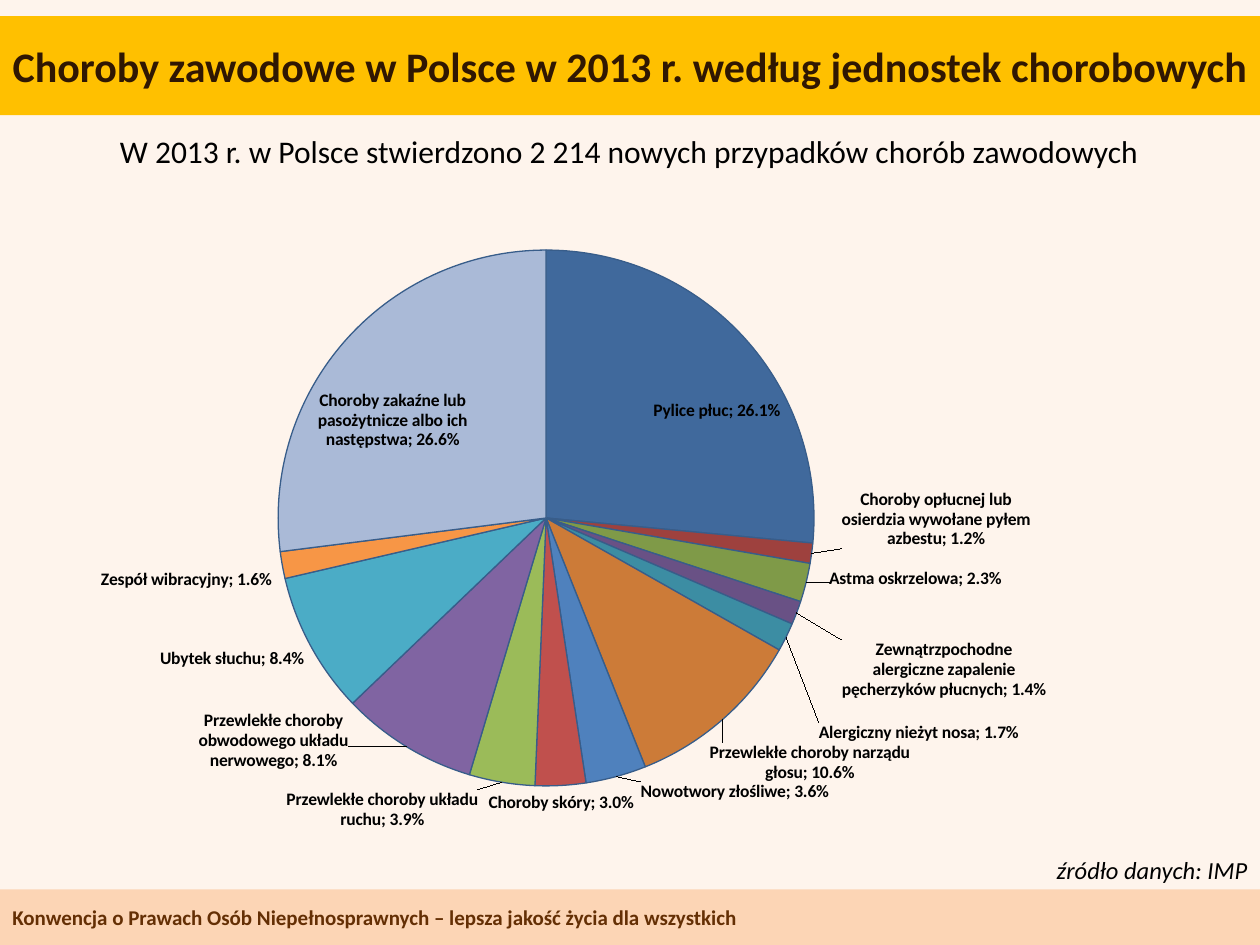
from copy import deepcopy

from pptx import Presentation
from pptx.chart.data import CategoryChartData
from pptx.dml.color import RGBColor
from pptx.enum.chart import XL_CHART_TYPE as ChartType, XL_LABEL_POSITION as LabelPos
from pptx.enum.shapes import MSO_SHAPE as Shape
from pptx.enum.text import MSO_ANCHOR as Anchor, PP_ALIGN as Align
from pptx.oxml import parse_xml
from pptx.oxml.ns import nsdecls, qn
from pptx.util import Pt

FONT = "Calibri"
PAPER = RGBColor(0xFE, 0xF4, 0xEC)
GOLD = RGBColor(0xFF, 0xC0, 0x00)
PEACH = RGBColor(0xFC, 0xD5, 0xB5)
DARK_BROWN = RGBColor(0x30, 0x17, 0x02)
BROWN = RGBColor(0x64, 0x2F, 0x04)
BLACK = RGBColor(0, 0, 0)
OUTLINE = RGBColor(0x38, 0x5D, 0x8A)

# Disease, share, slice colour, label shift in points from its place at the rim
DISEASES = [
    ("Pylice płuc", 0.261, RGBColor(0x40, 0x69, 0x9C), (-55, 50)),
    ("Choroby opłucnej lub osierdzia wywołane pyłem azbestu", 0.012,
     RGBColor(0x9E, 0x41, 0x3E), (13, -37)),
    ("Astma oskrzelowa", 0.023, RGBColor(0x7F, 0x9A, 0x48), (9, -9)),
    ("Zewnątrzpochodne alergiczne zapalenie pęcherzyków płucnych", 0.014,
     RGBColor(0x69, 0x51, 0x85), (22, 14)),
    ("Alergiczny nieżyt nosa", 0.017, RGBColor(0x3C, 0x8D, 0xA3), (15, 47)),
    ("Przewlekłe choroby narządu głosu", 0.106,
     RGBColor(0xCC, 0x7B, 0x38), (-10, 10)),
    ("Nowotwory złośliwe", 0.036, RGBColor(0x4F, 0x81, 0xBD), (13, -1)),
    ("Choroby skóry", 0.03, RGBColor(0xC0, 0x50, 0x4D), None),
    ("Przewlekłe choroby układu ruchu", 0.039,
     RGBColor(0x9B, 0xBB, 0x59), (-13, 0)),
    ("Przewlekłe choroby obwodowego układu nerwowego", 0.081,
     RGBColor(0x80, 0x64, 0xA2), (-31, -24)),
    ("Ubytek słuchu", 0.084, RGBColor(0x4B, 0xAC, 0xC6), None),
    ("Zespół wibracyjny", 0.016, RGBColor(0xF7, 0x96, 0x46), (-2, 2)),
    ("Choroby zakaźne lub pasożytnicze albo ich następstwa", 0.266,
     RGBColor(0xAA, 0xBA, 0xD7), (73, 65)),
]


def add_text(slide, box, text, size, color, align=Align.LEFT, bold=False,
             italic=False, inset=7.2):
    left, top, width, height = map(Pt, box)
    frame = slide.shapes.add_textbox(left, top, width, height).text_frame
    frame.word_wrap = True
    frame.vertical_anchor = Anchor.MIDDLE
    frame.margin_left = frame.margin_right = Pt(inset)
    paragraph = frame.paragraphs[0]
    paragraph.alignment = align
    run = paragraph.add_run()
    run.text = text
    font = run.font
    font.name, font.size, font.bold, font.italic = FONT, Pt(size), bold, italic
    font.color.rgb = color


def add_band(slide, box, fill, text, **text_format):
    """Full-width coloured strip with one line of text."""
    band = slide.shapes.add_shape(Shape.RECTANGLE, *map(Pt, box))
    band.shadow.inherit = False
    band.fill.solid()
    band.fill.fore_color.rgb = fill
    band.line.fill.background()
    add_text(slide, box, text, **text_format)


def layout_xml(**parts):
    values = "".join(f'<c:{name} val="{value}"/>' for name, value in parts.items())
    return (f'<c:layout {nsdecls("c")}><c:manualLayout>{values}'
            '</c:manualLayout></c:layout>')


def shift_label(labels, index, shift, box):
    """Give one slice its own label, moved by shift from the default place."""
    label = parse_xml(f'<c:dLbl {nsdecls("c")}><c:idx val="{index}"/></c:dLbl>')
    x, y = (round(move / side, 4) for move, side in zip(shift, box[2:]))
    label.append(parse_xml(layout_xml(x=x, y=y)))
    for part in labels:
        if part.tag not in (qn("c:dLbl"), qn("c:showLeaderLines")):
            label.append(deepcopy(part))
    return label


def add_disease_pie(slide, box):
    data = CategoryChartData(number_format="0.0%")
    data.categories = [name for name, *_ in DISEASES]
    data.add_series("Series 1", [share for _, share, *_ in DISEASES])
    chart = slide.shapes.add_chart(ChartType.PIE, *map(Pt, box), data).chart
    chart.has_legend = chart.has_title = False
    chart.font.name, chart.font.size = FONT, Pt(10)
    chart.font.color.rgb = BLACK

    # Fixed place of the pie within the chart
    plot_area = chart._chartSpace.chart.plotArea
    for old in plot_area.findall(qn("c:layout")):
        plot_area.remove(old)
    plot_area.insert(0, parse_xml(layout_xml(
        layoutTarget="inner", xMode="edge", yMode="edge",
        x=0.233, y=0.0566, w=0.5144, h=0.8457)))

    # Slices
    series = chart.plots[0].series[0]
    for index, (_, _, color, _) in enumerate(DISEASES):
        slice_format = series.points[index].format
        slice_format.fill.solid()
        slice_format.fill.fore_color.rgb = color
        slice_format.line.color.rgb = OUTLINE
        slice_format.line.width = Pt(0.75)

    # Labels
    labels = series.data_labels
    labels.show_category_name = labels.show_value = True
    labels.number_format, labels.number_format_is_linked = "0.0%", False
    labels.position = LabelPos.OUTSIDE_END
    font = labels.font
    font.name, font.size, font.bold = FONT, Pt(10), True
    font.color.rgb = BLACK
    holder = labels._element
    holder.find(qn("c:showBubbleSize")).addnext(
        parse_xml(f'<c:separator {nsdecls("c")}>; </c:separator>'))
    shifted = [shift_label(holder, index, shift, box)
               for index, (*_, shift) in enumerate(DISEASES) if shift]
    for position, label in enumerate(shifted):
        holder.insert(position, label)


def main():
    prs = Presentation()
    prs.slide_width, prs.slide_height = Pt(720), Pt(540)
    slide = prs.slides.add_slide(prs.slide_layouts[6])
    slide.background.fill.solid()
    slide.background.fill.fore_color.rgb = PAPER

    # Footer and title
    add_band(slide, (0, 508.2, 720, 31.8), PEACH,
             "Konwencja o Prawach Osób Niepełnosprawnych – lepsza jakość życia "
             "dla wszystkich", size=12, color=BROWN, bold=True)
    add_band(slide, (0, 9.2, 720, 56.6), GOLD,
             "Choroby zawodowe w Polsce w 2013 r. według jednostek chorobowych",
             size=24, color=DARK_BROWN, align=Align.CENTER, bold=True, inset=3)

    # Chart, source and lead sentence
    add_disease_pie(slide, (20.2, 122.4, 595.4, 362.2))
    add_text(slide, (544.3, 484.6, 175.7, 24.2), "źródło danych: IMP", 14, BLACK,
             align=Align.RIGHT, italic=True)
    add_text(slide, (25.2, 71.9, 668.9, 29),
             "W 2013 r. w Polsce stwierdzono 2 214 nowych przypadków chorób "
             "zawodowych", 18, BLACK, align=Align.CENTER)
    prs.save("out.pptx")


if __name__ == "__main__":
    main()
